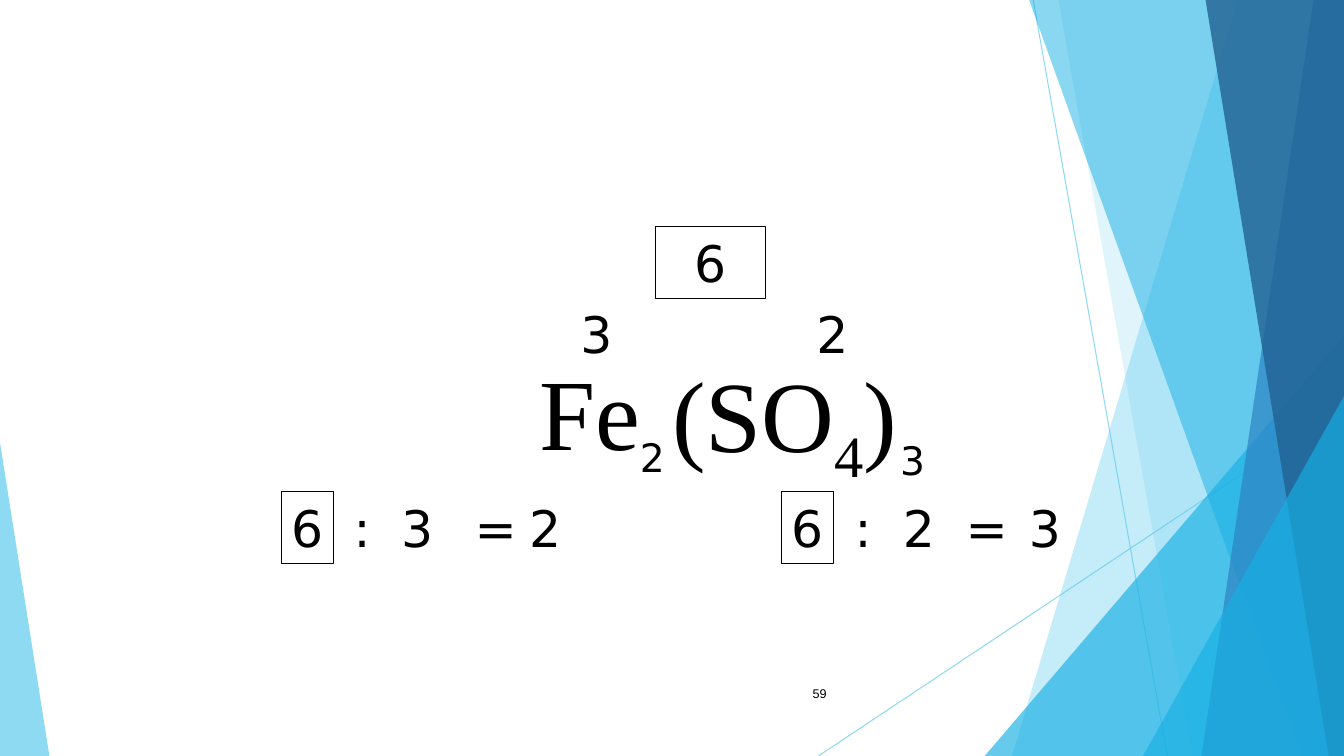
from lxml.etree import SubElement
from pptx import Presentation
from pptx.dml.color import RGBColor
from pptx.enum.shapes import MSO_CONNECTOR, MSO_SHAPE
from pptx.enum.text import MSO_ANCHOR, MSO_AUTO_SIZE, PP_ALIGN
from pptx.oxml.ns import qn
from pptx.util import Pt

BLACK = RGBColor(0x00, 0x00, 0x00)
SKY = RGBColor(0x5F, 0xCB, 0xEF)
CYAN = RGBColor(0x17, 0xB0, 0xE4)
BLUE = RGBColor(0x2E, 0x83, 0xC3)
NAVY = RGBColor(0x22, 0x62, 0x92)
WIDE, HIGH = 960, 540
SANS, SERIF = "DejaVu Sans", "Times New Roman"
ROW = 351.4
SIGNS = {":": 31, "=": 44.6}


def fade(item, percent):
    for color in item._element.spPr.iter(qn("a:srgbClr")):
        SubElement(color, qn("a:alpha"), val=str(percent * 1000))


def paint(shape, color, percent):
    shape.shadow.inherit = False
    shape.fill.solid()
    shape.fill.fore_color.rgb = color
    shape.line.fill.background()
    fade(shape, percent)


def add_ray(slide, *ends):
    ray = slide.shapes.add_connector(MSO_CONNECTOR.STRAIGHT, *map(Pt, ends))
    ray.line.color.rgb = SKY
    ray.line.width = Pt(0.75)
    fade(ray, 70)
    SubElement(ray._element.spPr, qn("a:effectLst"))


def add_panel(slide, top, base, color, percent):
    outline = slide.shapes.build_freeform(Pt(top), 0)
    corners = [(WIDE, 0), (WIDE, HIGH), (base, HIGH)]
    outline.add_line_segments([(Pt(x), Pt(y)) for x, y in corners])
    paint(outline.convert_to_shape(), color, percent)


def add_wedge(slide, left, top, width, peak, color, percent):
    box = map(Pt, (left, top, width, HIGH - top))
    wedge = slide.shapes.add_shape(MSO_SHAPE.ISOSCELES_TRIANGLE, *box)
    wedge.adjustments[0] = peak
    paint(wedge, color, percent)


def style(run, size, font):
    run.font.size = Pt(size)
    run.font.name = font
    run.font.color.rgb = BLACK


def add_text(slide, text, left, top, width, height=51.1, size=36, font=SANS,
             wrap=False, framed=False, align=PP_ALIGN.LEFT):
    box = map(Pt, (left, top, width, height))
    if framed:
        shape = slide.shapes.add_shape(MSO_SHAPE.RECTANGLE, *box)
        shape.shadow.inherit = False
        shape.fill.background()
        shape.line.color.rgb = BLACK
        shape.line.width = Pt(0.75)
    else:
        shape = slide.shapes.add_textbox(*box)
    frame = shape.text_frame
    frame.text = text
    frame.word_wrap = wrap
    frame.vertical_anchor = MSO_ANCHOR.TOP
    frame.auto_size = MSO_AUTO_SIZE.SHAPE_TO_FIT_TEXT
    line = frame.paragraphs[0]
    line.alignment = align
    gap = SubElement(line._p.get_or_add_pPr(), qn("a:spcBef"))
    SubElement(gap, qn("a:spcPct"), val="50000")
    style(line.runs[0], size, font)
    return line


def add_sum(slide, signs, lefts):
    for index, (sign, left) in enumerate(zip(signs, lefts)):
        width = SIGNS.get(sign, 37.4)
        add_text(slide, sign, left, ROW, width, framed=index == 0)


def add_number(slide, text):
    box = map(Pt, (417.6, 481, 180, 28.8))
    frame = slide.shapes.add_textbox(*box).text_frame
    frame.text = text
    frame.word_wrap = True
    frame.vertical_anchor = MSO_ANCHOR.MIDDLE
    frame.paragraphs[0].alignment = PP_ALIGN.RIGHT
    style(frame.paragraphs[0].runs[0], 9, "Arial")


def add_decor(slide):
    add_ray(slide, 738, 0, 833.8, HIGH)
    add_ray(slide, WIDE, 290.2, 584.6, HIGH)
    add_panel(slide, 884.2, 722.9, SKY, 36)
    add_panel(slide, 756, 851.8, SKY, 20)
    add_wedge(slide, 703.4, 239.8, 256.6, 1, CYAN, 66)
    add_panel(slide, 735.1, 929.5, CYAN, 50)
    add_panel(slide, 938.2, 858.2, BLUE, 70)
    add_panel(slide, 861.1, 949, NAVY, 80)
    add_wedge(slide, 816.5, 283, 143.5, 1, CYAN, 66)
    add_wedge(slide, 0, 316.1, 35.3, 0, SKY, 70)


def add_formula(slide):
    add_text(slide, "Fe", 378, 246.2, 105.1, 94.3, 72, SERIF, wrap=True)
    group = add_text(slide, "(SO", 473, 247.7, 180, 94.3, 72, SERIF)
    for text, shift in (("4", "-25000"), (")", "0")):
        run = group.add_run()
        run.text = text
        style(run, 72, SERIF)
        run.font._element.set("baseline", shift)
    add_text(slide, "3", 407.5, 213.1, 37.4)
    add_text(slide, "2", 576, 213.1, 126, wrap=True)
    add_text(slide, "6", 468, 162, 78.5, wrap=True, framed=True,
             align=PP_ALIGN.CENTER)
    add_text(slide, "2", 450, 306, 32.4, 41, 28)
    add_text(slide, "3", 635.8, 308.2, 41.8, 41, 28, wrap=True)


def main():
    deck = Presentation()
    deck.slide_width, deck.slide_height = Pt(WIDE), Pt(HIGH)
    slide = deck.slides.add_slide(deck.slide_layouts[6])
    add_decor(slide)
    add_number(slide, "59")
    add_formula(slide)
    add_sum(slide, "6:3=2", (200.9, 245.5, 279.4, 331.9, 370.8))
    add_sum(slide, "6:2=3", (558, 603.4, 637.9, 682.6, 727.9))
    deck.save("out.pptx")


if __name__ == "__main__":
    main()
